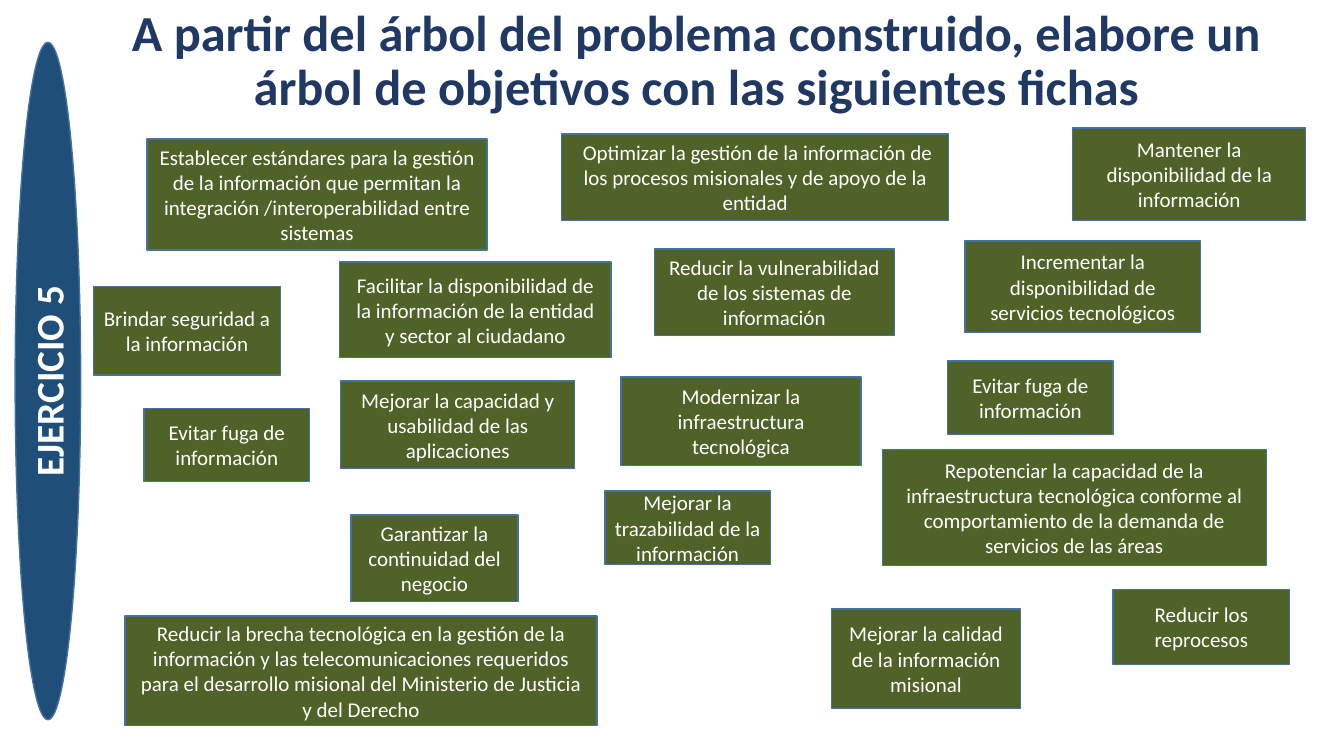
"""Builds the exercise slide with the cards for an objectives tree."""
from pptx import Presentation
from pptx.dml.color import RGBColor
from pptx.enum.shapes import MSO_SHAPE as Shape
from pptx.enum.text import MSO_ANCHOR as Anchor, MSO_AUTO_SIZE as AutoSize, PP_ALIGN as Align
from pptx.util import Inches, Pt

COLORS = {"title": "203864", "banner": "1F4E79", "card": "4F6228",
          "outline": "43739E", "text": "FFFFFF"}
FONT = "Calibri"

TITLE = ("A partir del árbol del problema construido, elabore un árbol de objetivos "
         "con las siguientes fichas")
TITLE_BOX = (1.14, 0.22, 11.54, 0.99)
BANNER = "EJERCICIO 5"
BANNER_BOX = (0.15, 0.42, 0.65, 6.72)

CARDS = [
    ("Reducir los reprocesos", (11.04, 5.85, 1.75, 0.74)),
    ("Facilitar la disponibilidad de la información de la entidad y sector al ciudadano",
     (3.37, 2.6, 2.69, 0.95)),
    ("Brindar seguridad a la información", (0.93, 2.84, 1.85, 0.88)),
    ("Mejorar la trazabilidad de la información", (6, 4.87, 1.64, 0.73)),
    ("Evitar fuga de información", (1.43, 4.05, 1.64, 0.73)),
    ("Reducir la brecha tecnológica en la gestión de la información y las "
     "telecomunicaciones requeridos para el desarrollo misional del Ministerio de "
     "Justicia y del Derecho", (1.24, 6.11, 4.68, 1.09)),
    (" Optimizar la gestión de la información de los procesos misionales y de apoyo "
     "de la entidad", (5.57, 1.33, 3.84, 0.86)),
    ("Mejorar la capacidad y usabilidad de las aplicaciones", (3.38, 3.78, 2.32, 0.87)),
    ("Repotenciar la capacidad de la infraestructura tecnológica conforme al "
     "comportamiento de la demanda de servicios de las áreas", (8.75, 4.46, 3.81, 1.15)),
    ("Reducir la vulnerabilidad de los sistemas de información", (6.49, 2.47, 2.38, 0.86)),
    ("Establecer estándares para la gestión de la información que permitan la "
     "integración /interoperabilidad entre sistemas", (1.46, 1.38, 3.37, 1.1)),
    ("Modernizar la infraestructura tecnológica", (6.16, 3.74, 2.38, 0.88)),
    ("Incrementar la disponibilidad de servicios tecnológicos", (9.57, 2.39, 2.34, 0.91)),
    ("Garantizar la continuidad del negocio", (3.48, 5.11, 1.66, 0.86)),
    ("Evitar fuga de información", (9.4, 3.58, 1.64, 0.73)),
    ("Mejorar la calidad de la información misional", (8.25, 6.04, 1.87, 0.99)),
    ("Mantener la disponibilidad de la información", (10.64, 1.27, 2.31, 0.92)),
]


def write(frame, text, size=15, color="text", bold=False, anchor=Anchor.MIDDLE, spacing=1.0):
    frame.word_wrap = True
    frame.auto_size = AutoSize.NONE
    frame.vertical_anchor = anchor
    paragraph = frame.paragraphs[0]
    paragraph.alignment = Align.CENTER
    paragraph.line_spacing = spacing
    run = paragraph.add_run()
    run.text = text
    run.font.name = FONT
    run.font.size = Pt(size)
    run.font.bold = bold
    run.font.color.rgb = RGBColor.from_string(COLORS[color])


def add_panel(slide, kind, box, fill):
    panel = slide.shapes.add_shape(kind, *map(Inches, box))
    panel.shadow.inherit = False
    panel.fill.solid()
    panel.fill.fore_color.rgb = RGBColor.from_string(COLORS[fill])
    panel.line.color.rgb = RGBColor.from_string(COLORS["outline"])
    panel.line.width = Pt(1)
    return panel


def main():
    deck = Presentation()
    deck.slide_width, deck.slide_height = Inches(13.33), Inches(7.5)
    slide = deck.slides.add_slide(deck.slide_layouts[5])

    title = slide.shapes.title
    title.left, title.top, title.width, title.height = map(Inches, TITLE_BOX)
    write(title.text_frame, TITLE, size=36, color="title", bold=True,
          anchor=Anchor.BOTTOM, spacing=0.9)

    banner = add_panel(slide, Shape.OVAL, BANNER_BOX, "banner")
    write(banner.text_frame, BANNER, size=28, bold=True)
    banner.text_frame._txBody.bodyPr.set("vert", "vert270")

    for objective, box in CARDS:
        card = add_panel(slide, Shape.RECTANGLE, box, "card")
        write(card.text_frame, objective)

    deck.save("out.pptx")


if __name__ == "__main__":
    main()
